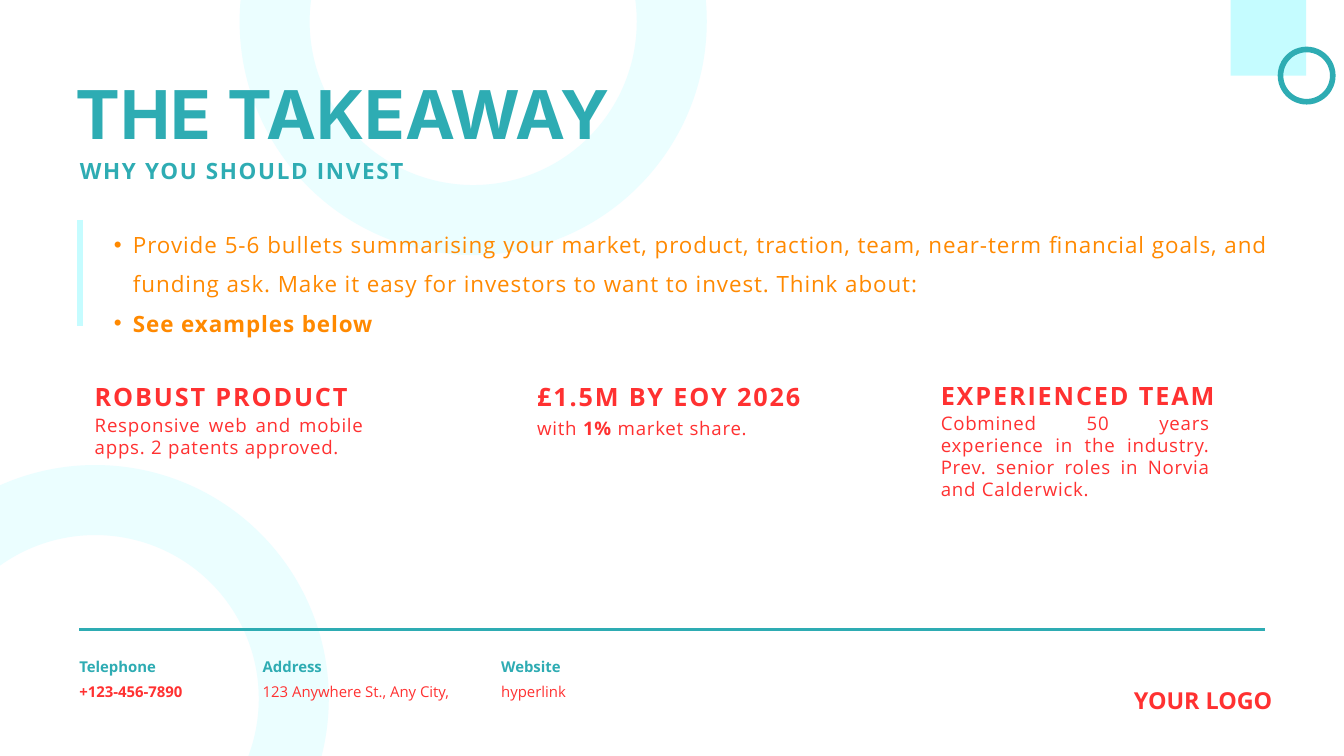
"""Build the investment takeaway slide with python-pptx."""
from lxml.etree import SubElement
from pptx import Presentation
from pptx.dml.color import RGBColor
from pptx.enum.shapes import MSO_CONNECTOR as Connector, MSO_SHAPE as Preset
from pptx.enum.text import MSO_ANCHOR as Anchor, MSO_AUTO_SIZE as AutoSize, PP_ALIGN as Align
from pptx.oxml.ns import qn
from pptx.util import Pt

THEME = {
    "teal": "2EACB3", "aqua": "C5FCFF", "mist": "EBFEFF", "orange": "FF8900", "red": "FF3131",
    "title": dict(font="Inter", size=72, color="teal", bold=True, leading=75.6),
    "subtitle": dict(size=24, color="teal", bold=True, leading=33.6, tracking=180),
    "bullets": dict(size=24, color="orange", leading=42.2, tracking=100, align=Align.JUSTIFY),
    "heading": dict(size=27, color="red", bold=True, leading=37.8, tracking=200),
    "detail": dict(size=20, color="red", leading=23.6, tracking=80, align=Align.JUSTIFY),
    "label": dict(size=16, color="teal", bold=True, leading=24.8, align=Align.JUSTIFY),
    "contact": dict(size=16, color="red", leading=24.8, align=Align.JUSTIFY),
    "logo": dict(size=25, color="red", bold=True, leading=35, align=Align.CENTER),
}

TITLE = [[("THE TAKEAWAY", False)]]
SUBTITLE = [[("WHY YOU SHOULD INVEST", False)]]
BULLETS = [
    [("Provide 5-6 bullets summarising your market, product, traction, team, near-term "
      "financial goals, and funding ask. Make it easy for investors to want to invest. "
      "Think about:", False)],
    [("See examples below", True)],
]
HIGHLIGHTS = [
    (101.5, 403, 443.5, 288.5, "ROBUST PRODUCT",
     [("Responsive web and mobile apps. 2 patents approved.", False)]),
    (575.5, 403, 446.5, 273, "£1.5M BY EOY 2026",
     [("with ", False), ("1%", True), (" market share.", False)]),
    (1008, 402, 442, 288.5, "EXPERIENCED TEAM",
     [("Cobmined 50 years experience in the industry. Prev. senior roles in Norvia "
       "and Calderwick.", False)]),
]
CONTACTS = [
    (85, 158, "Telephone", "+123-456-7890", True),
    (281.5, 214.5, "Address", "123 Anywhere St., Any City,", False),
    (537, 226, "Website", "hyperlink", False),
]
LOGO = [[("YOUR LOGO", False)]]


def color(name):
    return RGBColor.from_string(THEME[name])


def write(shape, paragraphs, style):
    look = THEME[style]
    frame = shape.text_frame
    frame.word_wrap = True
    frame.auto_size = AutoSize.NONE
    frame.vertical_anchor = Anchor.TOP
    frame.margin_left = frame.margin_top = frame.margin_right = frame.margin_bottom = 0
    for index, runs in enumerate(paragraphs):
        paragraph = frame.add_paragraph() if index else frame.paragraphs[0]
        paragraph.alignment = look.get("align", Align.LEFT)
        paragraph.line_spacing = Pt(look["leading"])
        paragraph.space_before = Pt(0)
        for text, bold in runs:
            run = paragraph.add_run()
            run.text = text
            run.font.name = look.get("font", "Open Sans")
            run.font.size = Pt(look["size"])
            run.font.bold = bold or look.get("bold", False)
            run.font.color.rgb = color(look["color"])
            run.font._element.set("spc", str(look.get("tracking", 0)))
    return frame


def add_text(slide, box, paragraphs, style):
    return write(slide.shapes.add_textbox(*map(Pt, box)), paragraphs, style)


def add_bullet(paragraph, indent, hanging):
    properties = paragraph._p.get_or_add_pPr()
    properties.set("marL", str(Pt(indent)))
    properties.set("indent", str(-Pt(hanging)))
    SubElement(properties, qn("a:buFont")).set("typeface", "Arial")
    SubElement(properties, qn("a:buChar")).set("char", "•")


def add_ring(slide, center_x, center_y, diameter, line_color, width):
    left, top = center_x - diameter / 2, center_y - diameter / 2
    ring = slide.shapes.add_shape(Preset.OVAL, Pt(left), Pt(top), Pt(diameter), Pt(diameter))
    ring.shadow.inherit = False
    ring.fill.background()
    ring.line.color.rgb = color(line_color)
    ring.line.width = Pt(width)


def add_line(slide, start, end, line_color, width):
    line = slide.shapes.add_connector(Connector.STRAIGHT, *map(Pt, start + end))
    line.line.color.rgb = color(line_color)
    line.line.width = Pt(width)
    SubElement(line._element.spPr, qn("a:effectLst"))


def main():
    presentation = Presentation()
    presentation.slide_width, presentation.slide_height = Pt(1440), Pt(810)
    slide = presentation.slides.add_slide(presentation.slide_layouts[5])

    square = slide.shapes.add_shape(Preset.RECTANGLE, Pt(1318.5), Pt(-8.5), Pt(81), Pt(89.5))
    square.shadow.inherit = False
    square.fill.solid()
    square.fill.fore_color.rgb = color("aqua")
    square.line.fill.background()
    add_ring(slide, 507, 23, 425.5, "mist", 75)
    add_ring(slide, 102, 748.5, 425.5, "mist", 75)
    add_ring(slide, 1400, 81, 56, "teal", 6)

    title = slide.shapes.title
    title.left, title.top, title.width, title.height = map(Pt, (81, 88.5, 722, 78.5))
    write(title, TITLE, "title")
    slide.shapes._spTree.append(title._element)
    add_text(slide, (85.5, 163.5, 537, 31), SUBTITLE, "subtitle")

    add_line(slide, (85.5, 235.5), (85.5, 349), "aqua", 6)
    bullets = add_text(slide, (101.5, 234, 1258, 122.5), BULLETS, "bullets")
    for paragraph in bullets.paragraphs:
        add_bullet(paragraph, 41, 20.5)

    for left, heading_top, detail_top, width, heading, detail in HIGHLIGHTS:
        add_text(slide, (left, heading_top, 310, 35), [[(heading, True)]], "heading")
        add_text(slide, (left, detail_top, width, 94), [detail], "detail")

    add_line(slide, (85, 674.5), (1355, 674.5), "teal", 3)
    for left, width, label, value, bold in CONTACTS:
        add_text(slide, (left, 699, width, 23), [[(label, True)]], "label")
        add_text(slide, (left, 726, width, 23), [[(value, bold)]], "contact")
    add_text(slide, (1163.5, 730, 251, 33), LOGO, "logo")

    presentation.save("out.pptx")


if __name__ == "__main__":
    main()
